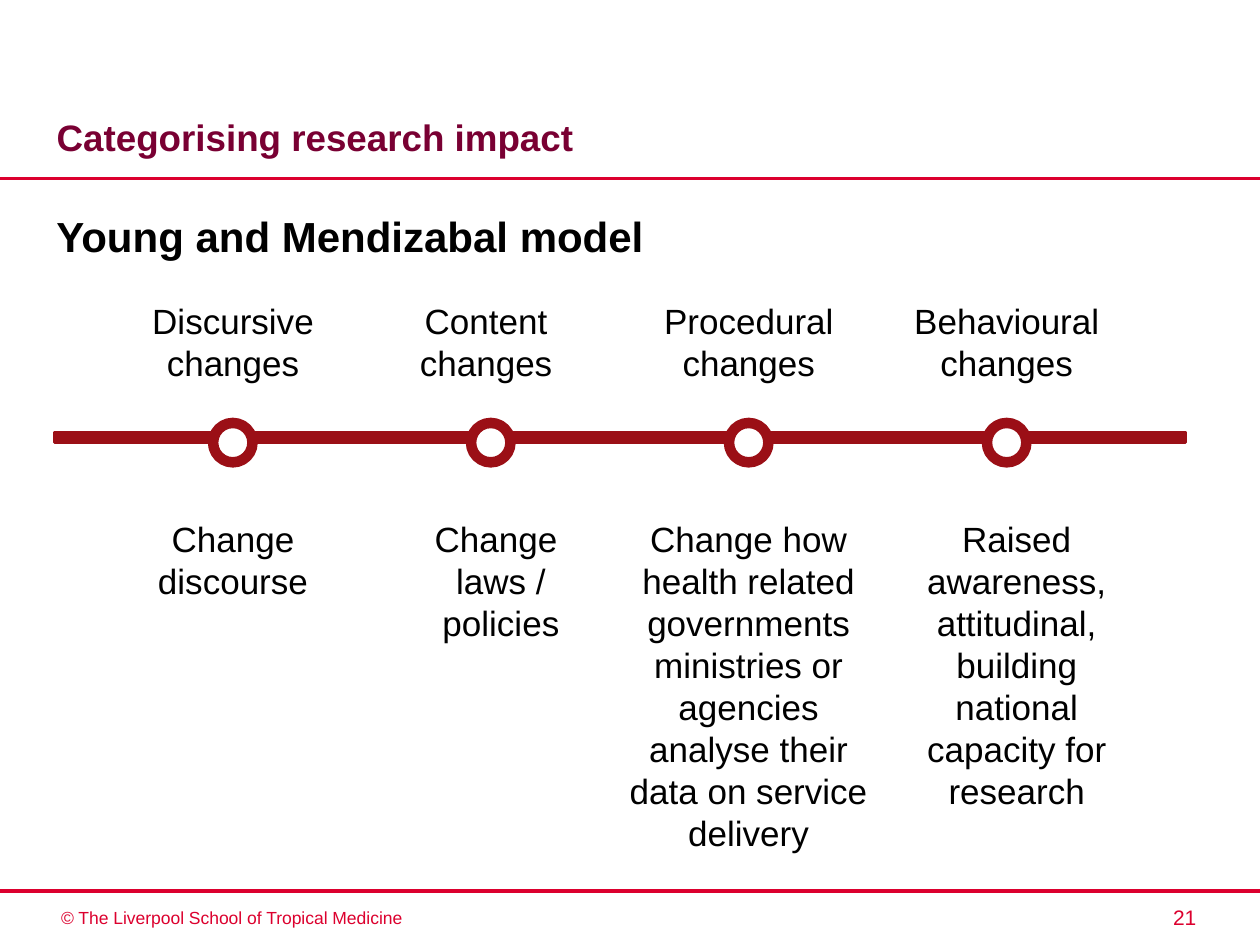
from dataclasses import dataclass

import pptx
import pptx.dml.color
import pptx.enum.shapes
import pptx.enum.text
import pptx.oxml.ns
import pptx.util
from lxml import etree

Pt = pptx.util.Pt
Align = pptx.enum.text.PP_ALIGN
Anchor = pptx.enum.text.MSO_ANCHOR
Preset = pptx.enum.shapes.MSO_SHAPE

BLACK = pptx.dml.color.RGBColor(0x00, 0x00, 0x00)
WHITE = pptx.dml.color.RGBColor(0xFF, 0xFF, 0xFF)
CRIMSON = pptx.dml.color.RGBColor(0xDC, 0x00, 0x2E)
PLUM = pptx.dml.color.RGBColor(0x79, 0x00, 0x33)
DARK_RED = pptx.dml.color.RGBColor(0x9B, 0x0F, 0x16)

SLIDE_WIDTH, SLIDE_HEIGHT = 720, 540
HEADING_TOP, HEADING_HEIGHT = 167.8, 55.4
DETAIL_TOP = 292.3
MARKER_LEFT, MARKER_TOP, MARKER_SIZE, MARKER_PITCH = 121.8, 241.7, 22.5, 147.4

BODY = {"name": "Arial", "size": Pt(20), "bold": False}
SUBTITLE = {"name": "Arial", "size": Pt(24), "bold": True}
TITLE = {"name": "Arial", "size": Pt(21), "bold": True}
COPYRIGHT = {"name": "Arial", "size": Pt(10), "bold": False}
PAGE_NUMBER = {"name": "Arial", "size": Pt(12), "bold": False}


@dataclass(frozen=True)
class Box:
    left: float
    top: float
    width: float
    height: float


@dataclass(frozen=True)
class Stage:
    heading: str
    heading_left: float
    heading_width: float
    detail: str
    detail_left: float
    detail_width: float
    detail_height: float


STAGES = [
    Stage("Discursive changes", 65.2, 136, "Change discourse", 65.2, 136, 55.4),
    Stage("Content changes", 218.3, 119, "Change \nlaws / policies", 218.3, 136, 80),
    Stage("Procedural changes", 365.6, 124.6,
          "Change how health related governments ministries or agencies "
          "analyse their data on service delivery", 348.6, 158.4, 201),
    Stage("Behavioural changes", 513, 124.6,
          "Raised awareness, attitudinal, building national capacity for research",
          513, 136, 177),
]


def fill_text(shape, text: str, font: dict, color, alignment=Align.LEFT, anchor=Anchor.TOP) -> None:
    frame = shape.text_frame
    frame.word_wrap = True
    frame.auto_size = pptx.enum.text.MSO_AUTO_SIZE.NONE
    frame.vertical_anchor = anchor
    frame.text = text
    for paragraph in frame.paragraphs:
        paragraph.alignment = alignment
        for name, value in font.items():
            setattr(paragraph.font, name, value)
        paragraph.font.color.rgb = color


def add_text(slide, box: Box, text: str, font: dict, color=BLACK, alignment=Align.LEFT) -> None:
    shape = slide.shapes.add_textbox(Pt(box.left), Pt(box.top), Pt(box.width), Pt(box.height))
    fill_text(shape, text, font, color, alignment)


def add_rule(slide, top: float) -> None:
    rule = slide.shapes.add_connector(
        pptx.enum.shapes.MSO_CONNECTOR.STRAIGHT, Pt(0), Pt(top), Pt(SLIDE_WIDTH), Pt(top))
    rule.line.color.rgb = CRIMSON
    rule.line.width = Pt(2.25)
    etree.SubElement(rule._element.spPr, pptx.oxml.ns.qn("a:effectLst"))


def add_outlined(slide, preset, box: Box, fill, line_width: float) -> None:
    shape = slide.shapes.add_shape(
        preset, Pt(box.left), Pt(box.top), Pt(box.width), Pt(box.height))
    shape.shadow.inherit = False
    shape.fill.solid()
    shape.fill.fore_color.rgb = fill
    shape.line.color.rgb = DARK_RED
    shape.line.width = Pt(line_width)


def add_stage(slide, index: int, stage: Stage) -> None:
    marker = Box(MARKER_LEFT + index * MARKER_PITCH, MARKER_TOP, MARKER_SIZE, MARKER_SIZE)
    add_outlined(slide, Preset.FLOWCHART_CONNECTOR, marker, WHITE, 6)
    heading = Box(stage.heading_left, HEADING_TOP, stage.heading_width, HEADING_HEIGHT)
    add_text(slide, heading, stage.heading, BODY, alignment=Align.CENTER)
    detail = Box(stage.detail_left, DETAIL_TOP, stage.detail_width, stage.detail_height)
    add_text(slide, detail, stage.detail, BODY, alignment=Align.CENTER)


def main() -> None:
    presentation = pptx.Presentation()
    presentation.slide_width = Pt(SLIDE_WIDTH)
    presentation.slide_height = Pt(SLIDE_HEIGHT)
    slide = presentation.slides.add_slide(presentation.slide_layouts.get_by_name("Title Only"))

    title = slide.shapes.title
    title_place = {"left": Pt(25.2), "top": Pt(21.6), "width": Pt(658.8), "height": Pt(72.7)}
    for name, value in title_place.items():
        setattr(title, name, value)
    fill_text(title, "Categorising research impact", TITLE, PLUM, anchor=Anchor.BOTTOM)

    for top in (102, 509):
        add_rule(slide, top)
    add_text(slide, Box(25.2, 116.6, 476, 36), "Young and Mendizabal model", SUBTITLE)
    add_outlined(slide, Preset.RECTANGLE, Box(31.2, 247.4, 646.4, 5.6), DARK_RED, 2)
    for index, stage in enumerate(STAGES):
        add_stage(slide, index, stage)
    add_text(slide, Box(27.8, 514.8, 284.4, 19.4),
             "© The Liverpool School of Tropical Medicine", COPYRIGHT, CRIMSON)
    add_text(slide, Box(559, 513.6, 131.8, 21.6), "21", PAGE_NUMBER, CRIMSON, Align.RIGHT)
    presentation.save("out.pptx")


if __name__ == "__main__":
    main()
